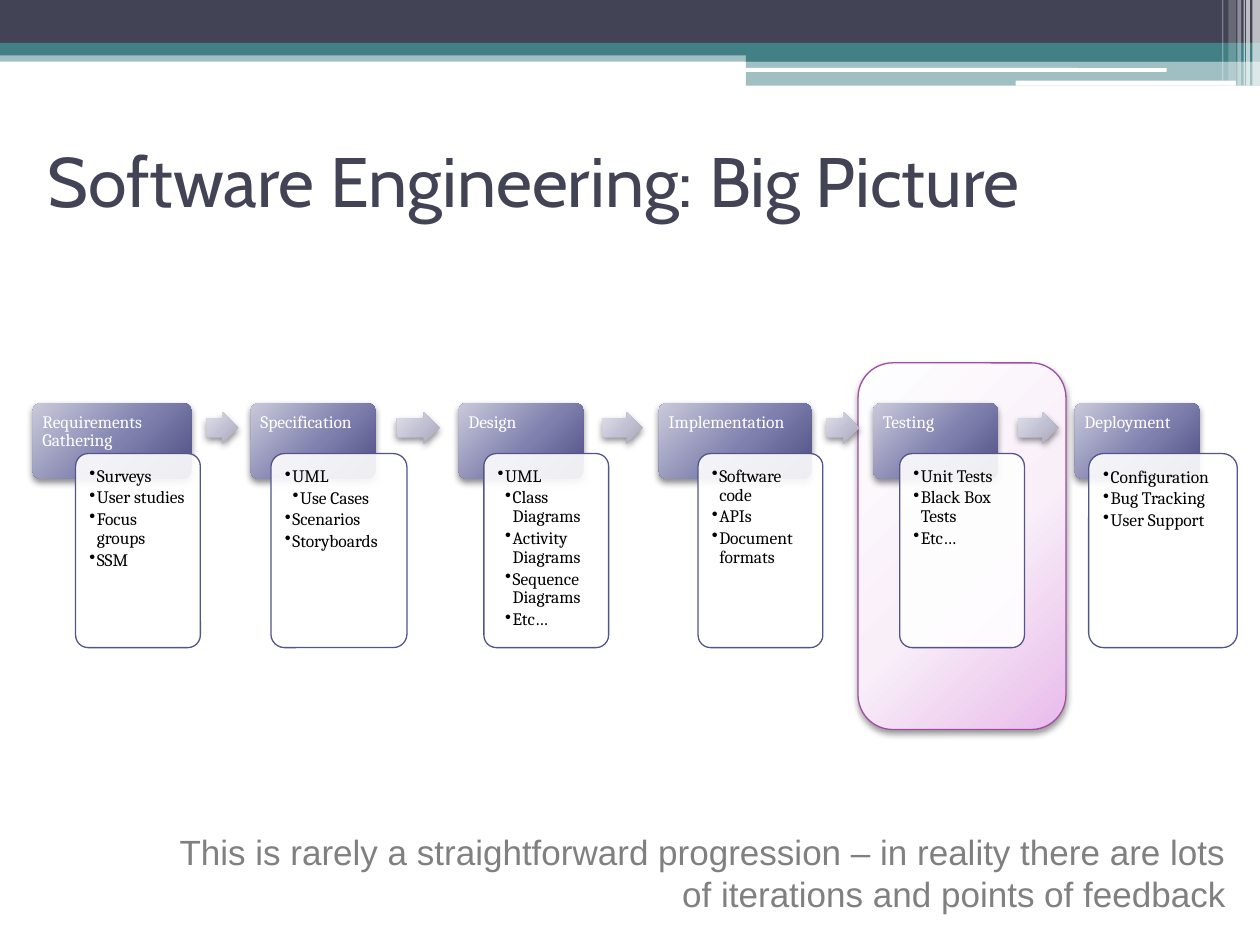
from lxml import etree
from pptx import Presentation
from pptx.dml.color import RGBColor
from pptx.enum.shapes import MSO_SHAPE
from pptx.enum.text import MSO_ANCHOR, PP_ALIGN
from pptx.oxml.ns import qn
from pptx.util import Inches, Pt

RECT, ROUNDED, ARROW = MSO_SHAPE.RECTANGLE, MSO_SHAPE.ROUNDED_RECTANGLE, MSO_SHAPE.RIGHT_ARROW
TOP, MIDDLE = MSO_ANCHOR.TOP, MSO_ANCHOR.MIDDLE
LEFT, RIGHT = PP_ALIGN.LEFT, PP_ALIGN.RIGHT

WHITE = RGBColor(0xFF, 0xFF, 0xFF)
BLACK = RGBColor(0x00, 0x00, 0x00)
GREY = RGBColor(0x80, 0x80, 0x80)
NAVY = RGBColor(0x42, 0x44, 0x56)
TEAL = RGBColor(0x43, 0x80, 0x86)
INDIGO = RGBColor(0x53, 0x54, 0x8A)
PURPLE = RGBColor(0xA0, 0x4D, 0xA3)

# Gradient colours at 0, 55 and 100 percent
STOPS = (0, 55, 100)
HEADER_GRADIENT = [RGBColor(0xC9, 0xC9, 0xDA), RGBColor(0x7F, 0x80, 0xAE), RGBColor(0x4D, 0x4E, 0x81)]
ARROW_GRADIENT = [RGBColor(0xE1, 0xE1, 0xEA), RGBColor(0xC0, 0xC0, 0xD3), RGBColor(0xA7, 0xA7, 0xB7)]
PANEL_GRADIENT = [RGBColor(0xFE, 0xFE, 0xFF), RGBColor(0xF9, 0xEF, 0xF9), RGBColor(0xE8, 0xBB, 0xEA)]

TITLE = "Software Engineering: Big Picture"
REMARK = ("This is rarely a straightforward progression – in reality there are lots "
          "of iterations and points of feedback")

# name, header (left, width), card (left, width), arrow to the next phase (left, width),
# bullets as (level, text)
PHASES = [
    ("Requirements Gathering", (0.26, 1.26), (0.6, 0.99), (1.64, 0.25),
     [(1, "Surveys"), (1, "User studies"), (1, "Focus groups"), (1, "SSM")]),
    ("Specification", (1.99, 0.99), (2.15, 1.08), (3.15, 0.34),
     [(1, "UML"), (2, "Use Cases"), (1, "Scenarios"), (1, "Storyboards")]),
    ("Design", (3.64, 0.99), (3.84, 0.99), (4.78, 0.32),
     [(1, "UML"), (2, "Class Diagrams"), (2, "Activity Diagrams"),
      (2, "Sequence Diagrams"), (2, "Etc…")]),
    ("Implementation", (5.23, 1.21), (5.54, 0.99), (6.56, 0.26),
     [(1, "Software code"), (1, "APIs"), (1, "Document formats")]),
    ("Testing", (6.93, 0.99), (7.14, 0.99), (8.08, 0.32),
     [(1, "Unit Tests"), (1, "Black Box Tests"), (1, "Etc…")]),
    ("Deployment", (8.53, 0.99), (8.64, 1.18), None,
     [(1, "Configuration"), (1, "Bug Tracking"), (1, "User Support")]),
]
HEADER_ROW, CARD_ROW, ARROW_ROW = (3.2, 0.6), (3.6, 1.54), (3.27, 0.25)  # top, height
BULLET_INDENT = 0.06

# kind, (left, top, width, height), colour, opacity in percent
BANNER = [
    (RECT, (0, 0.4, 10, 0.09), TEAL, 50),
    (RECT, (0, 0, 10, 0.34), NAVY, 100),
    (RECT, (0, 0.34, 10, 0.1), TEAL, 100),
    (RECT, (5.92, 0.39, 4.08, 0.1), TEAL, 100),
    (RECT, (5.92, 0.48, 4.08, 0.2), TEAL, 50),
    (ROUNDED, (5.91, 0.54, 3.35, 0.03), WHITE, 100),
    (ROUNDED, (8.06, 0.64, 1.75, 0.04), WHITE, 100),
]
# left, width, height, opacity of the stripes in the top right corner
STRIPES = [(9.94, 0.06, 0.68, 65), (9.89, 0.03, 0.68, 65), (9.87, 0.01, 0.68, 60),
           (9.82, 0.03, 0.68, 40), (9.75, 0.06, 0.64, 20), (9.7, 0.01, 0.64, 30)]


def child(parent, tag, **attributes):
    return etree.SubElement(parent, qn(tag), {k: str(v) for k, v in attributes.items()})


def add_alpha(color, percent):
    child(color, "a:alpha", val=percent * 1000)


def fill_gradient(shape, colors):
    """Radial gradient centred far above the left corner, so it runs diagonally."""
    properties = shape._element.spPr
    gradient = etree.Element(qn("a:gradFill"), rotWithShape="1")
    stops = child(gradient, "a:gsLst")
    for position, color in zip(STOPS, colors):
        child(child(stops, "a:gs", pos=position * 1000), "a:srgbClr", val=color)
    circle = child(gradient, "a:path", path="circle")
    child(circle, "a:fillToRect", l=-40000, t=-90000, r=140000, b=190000)
    properties.find(qn("a:prstGeom")).addnext(gradient)


def add_block(slide, kind, box, fill, opacity=100, line=None, shadow=0, adjust=()):
    """Add a shape; fill is a colour or a list of gradient colours, shadow an opacity."""
    shape = slide.shapes.add_shape(kind, *map(Inches, box))
    for index, value in enumerate(adjust):
        shape.adjustments[index] = value
    if isinstance(fill, list):
        fill_gradient(shape, fill)
    else:
        shape.fill.solid()
        shape.fill.fore_color.rgb = fill
        if opacity < 100:
            add_alpha(shape._element.spPr.find(".//" + qn("a:srgbClr")), opacity)
    if line is None:
        shape.line.fill.background()
    else:
        shape.line.color.rgb = line
        shape.line.width = Pt(0.75)
    shape.shadow.inherit = False
    if shadow:
        effects = shape._element.spPr.find(qn("a:effectLst"))
        outer = child(effects, "a:outerShdw", blurRad=Pt(4), dist=Pt(2), dir=90 * 60000,
                      rotWithShape=0)
        add_alpha(child(outer, "a:srgbClr", val=BLACK), shadow)
    return shape


def write(shape, items, size=10, font="Cambria", color=BLACK, align=LEFT, anchor=TOP,
          margins=None, line_spacing=None, after=0):
    """Write (level, text) items; level 0 has no bullet."""
    frame = shape.text_frame
    frame.word_wrap = True
    frame.vertical_anchor = anchor
    if margins:
        (frame.margin_left, frame.margin_top,
         frame.margin_right, frame.margin_bottom) = map(Inches, margins)
    for index, (level, text) in enumerate(items):
        paragraph = frame.paragraphs[0] if index == 0 else frame.add_paragraph()
        paragraph.alignment = align
        paragraph.space_after = Pt(after)
        if line_spacing:
            paragraph.line_spacing = line_spacing
        if level:
            properties = paragraph._p.get_or_add_pPr()
            properties.set("marL", str(Inches(level * BULLET_INDENT)))
            properties.set("indent", str(-Inches(BULLET_INDENT)))
            child(properties, "a:buChar", char="•")
        run = paragraph.add_run()
        run.text = text
        run.font.size = Pt(size)
        run.font.name = font
        run.font.color.rgb = color


def add_phase(slide, name, header_span, card_span, arrow_span, bullets):
    def cell(span, row):
        return span[0], row[0], span[1], row[1]

    header = add_block(slide, ROUNDED, cell(header_span, HEADER_ROW), HEADER_GRADIENT,
                       shadow=45, adjust=[0.1])
    write(header, [(0, name)], color=WHITE, margins=(0.06, 0.06, 0.06, 0.04), line_spacing=0.9)
    card = add_block(slide, ROUNDED, cell(card_span, CARD_ROW), WHITE, opacity=90,
                     line=INDIGO, adjust=[0.1])
    write(card, bullets, margins=(0.08,) * 4, line_spacing=0.9, after=1.5)
    if arrow_span:
        add_block(slide, ARROW, cell(arrow_span, ARROW_ROW), ARROW_GRADIENT,
                  shadow=45, adjust=[0.6, 0.5])


def main():
    deck = Presentation()
    deck.slide_width, deck.slide_height = Inches(10), Inches(7.5)
    slide = deck.slides.add_slide(deck.slide_layouts[6])

    for kind, box, color, opacity in BANNER:
        add_block(slide, kind, box, color, opacity)
    for left, width, height, opacity in STRIPES:
        add_block(slide, RECT, (left, 0, width, height), WHITE, opacity)

    add_block(slide, ROUNDED, (6.81, 2.88, 1.65, 2.91), PANEL_GRADIENT, line=PURPLE, shadow=40)
    title = slide.shapes.add_textbox(*map(Inches, (0.28, 0.84, 9, 1.17)))
    write(title, [(0, TITLE)], size=40, font="Cabin", color=NAVY, anchor=MIDDLE)
    for phase in PHASES:
        add_phase(slide, *phase)
    remark = slide.shapes.add_textbox(*map(Inches, (1.3, 6.54, 8.53, 0.77)))
    write(remark, [(0, REMARK)], size=20, font="Arial", color=GREY, align=RIGHT)

    deck.save("out.pptx")


if __name__ == "__main__":
    main()
